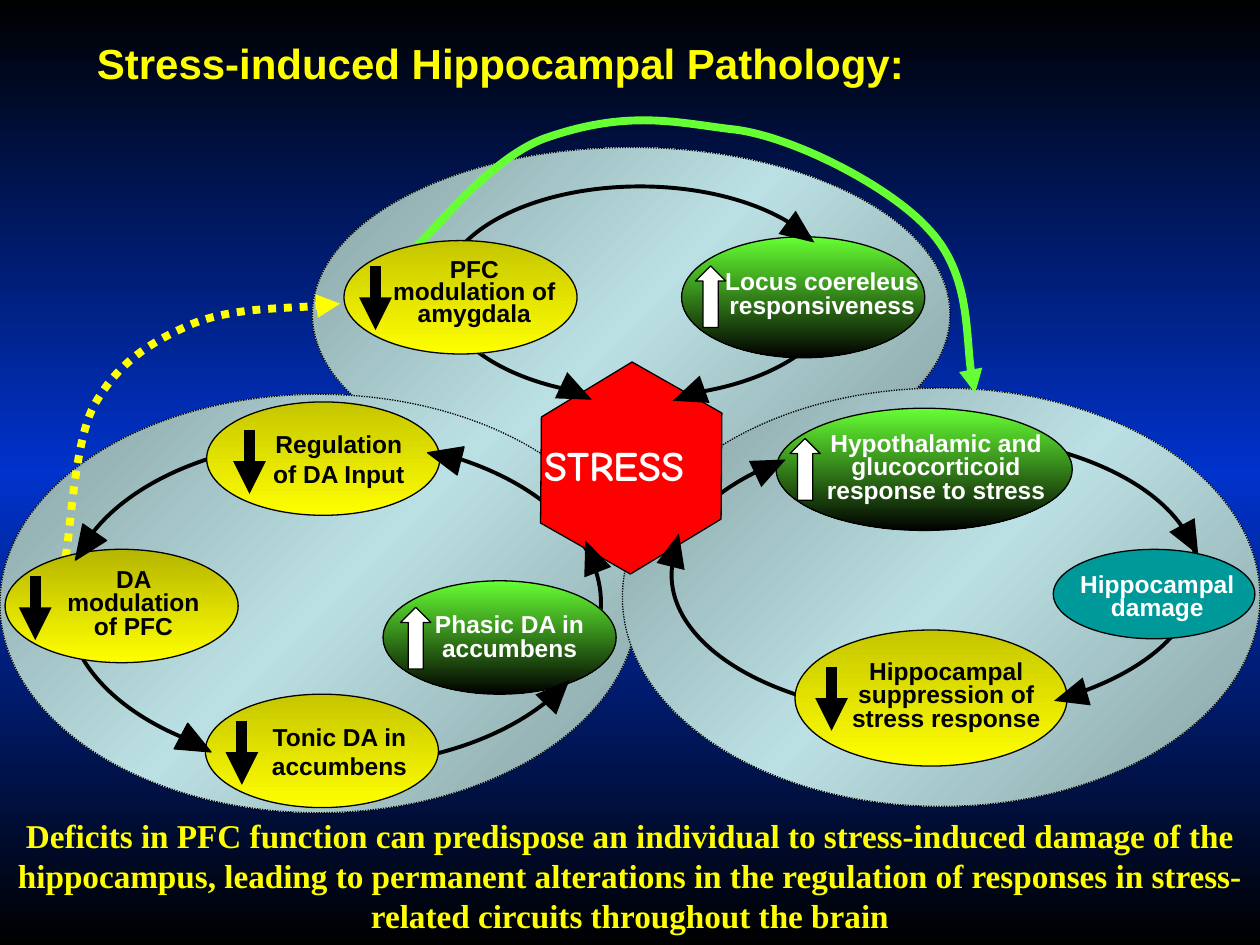
from copy import deepcopy
from dataclasses import dataclass

from pptx import Presentation, util as u
from pptx.dml.color import RGBColor
from pptx.enum import dml, shapes as kinds, text as texts
from pptx.oxml.xmlchemy import OxmlElement

BLACK = RGBColor(0x00, 0x00, 0x00)
WHITE = RGBColor(0xFF, 0xFF, 0xFF)
BLUE = RGBColor(0x00, 0x33, 0xCC)
YELLOW = RGBColor(0xFF, 0xFF, 0x00)
OLIVE = RGBColor(0xC6, 0xC6, 0x00)
DARK_OLIVE = RGBColor(0xB6, 0xB6, 0x00)
GREEN = RGBColor(0x66, 0xFF, 0x33)
TEAL = RGBColor(0x00, 0x99, 0x99)
RED = RGBColor(0xFF, 0x00, 0x00)
SLATE = RGBColor(0x86, 0xA0, 0xA2)
MIST = RGBColor(0xBB, 0xE0, 0xE3)

LOWERED = (OLIVE, YELLOW)
RAISED = (GREEN, BLACK)
Box = tuple[float, float, float, float]
Point = tuple[float, float]
Shape = kinds.MSO_SHAPE


@dataclass
class Node:
    label: str
    oval: Box
    label_box: Box
    colours: tuple
    down: Point | None = None  # top of a falling arrow
    up: Point | None = None  # top left of a rising arrow
    spacing: float = 0.8


@dataclass
class ArrowHead:
    left: float
    top: float
    rotation: float
    outlined: bool = False


LOBES = [(2.48, 1.17, 5.06, 2.65), (0, 3.13, 5.06, 3.32), (4.94, 3.08, 5.06, 3.32)]
RINGS = [(0.53, 3.49, 4.24, 2.59), (3.51, 1.48, 3.14, 1.67), (5.33, 3.45, 4.18, 2.23)]

NODES = [
    Node("Regulation of DA Input", (1.64, 3.19, 1.85, 0.9), (1.97, 3.36, 1.44, 0.57),
         LOWERED, down=(1.98, 3.41), spacing=1),
    Node("Tonic DA in accumbens", (1.63, 5.51, 1.85, 0.9), (1.93, 5.68, 1.53, 0.57),
         LOWERED, down=(1.92, 5.72), spacing=1),
    Node("Phasic DA in accumbens", (3.04, 4.61, 1.85, 0.9), (3.28, 4.83, 1.53, 0.47),
         RAISED, up=(3.18, 4.82)),
    Node("Locus coereleus responsiveness", (5.41, 1.88, 1.93, 0.96),
         (5.63, 2.11, 1.79, 0.47), RAISED, up=(5.52, 2.11)),
    Node("Hippocampal suppression of stress response", (6.31, 5, 2.16, 1.08),
         (6.6, 5.2, 1.82, 0.66), LOWERED, down=(6.6, 5.29)),
    Node("Hippocampal damage", (8.36, 4.36, 1.6, 0.71), (8.29, 4.51, 1.79, 0.47), (TEAL,)),
    Node("Hypothalamic and glucocorticoid response to stress", (6.16, 3.24, 2.35, 0.97),
         (6.4, 3.39, 2.06, 0.66), RAISED, up=(6.27, 3.48)),
    Node("DA modulation of PFC", (0.04, 4.36, 1.85, 0.9), (0.38, 4.47, 1.36, 0.66),
         (DARK_OLIVE, YELLOW), down=(0.28, 4.57)),
    Node("PFC modulation of amygdala", (2.73, 1.91, 1.85, 0.9), (3, 2.02, 1.53, 0.63),
         LOWERED, down=(2.98, 2.11), spacing=0.75),
]

ARROW_HEADS = [
    ArrowHead(3.41, 3.49, 283.9, True), ArrowHead(0.56, 4.2, 214.7, True),
    ArrowHead(1.44, 5.77, 117.9, True), ArrowHead(4.31, 5.36, 43.9),
    ArrowHead(4.58, 4.28, 338.7), ArrowHead(5.24, 4.23, 14.1),
    ArrowHead(6, 3.57, 64.8), ArrowHead(9.33, 4.15, 151.4),
    ArrowHead(8.38, 5.39, 253.9), ArrowHead(6.24, 1.71, 126.5),
    ArrowHead(4.46, 2.98, 115.2), ArrowHead(5.35, 3, 250.2),
]

DOPAMINE_TO_PFC = [
    (0.52, 4.42), (0.56, 4.22), (0.59, 3.53), (0.74, 3.23), (0.91, 2.92),
    (1.13, 2.75), (1.46, 2.6), (1.79, 2.44), (2.44, 2.45), (2.7, 2.41),
]
PFC_TO_HYPOTHALAMUS = [
    (3.31, 1.95), (3.47, 1.81), (3.89, 1.26), (4.32, 1.1), (5, 0.86), (5.39, 0.98),
    (5.84, 1.03), (6.3, 1.09), (7.07, 1.48), (7.38, 1.83), (7.7, 2.18), (7.66, 2.85),
    (7.74, 3.12),
]


def lengths(*inches: float) -> list[u.Cm]:
    return [u.Cm(value * 2.54) for value in inches]


def set_fill(owner, colours: tuple, angle: int = 90) -> None:
    """Fill with one colour, or with two or three evenly spaced, angle clockwise."""
    fill = owner.fill
    if len(colours) == 1:
        fill.solid()
        fill.fore_color.rgb = colours[0]
        return
    fill.gradient()
    fill.gradient_angle = 360 - angle
    if len(colours) == 3:
        element = owner.element.xpath(".//a:gsLst")[0]
        element.insert(1, deepcopy(element[0]))
    for index, (stop, colour) in enumerate(zip(fill.gradient_stops, colours)):
        stop.color.rgb = colour
        stop.position = index / (len(colours) - 1)


def set_line(shape, colour: RGBColor, width: float, dotted=False, arrow=False) -> None:
    shape.line.color.rgb = colour
    shape.line.width = u.Pt(width)
    if dotted:
        shape.line.dash_style = dml.MSO_LINE.ROUND_DOT
    if arrow:
        tail = OxmlElement("a:tailEnd")
        tail.set("type", "triangle")
        shape.line._get_or_add_ln().append(tail)


def add_shape(shapes, kind, box: Box, colours: tuple = (), *, angle=90,
              line_width=0.75, dotted=False, rotation=0):
    shape = shapes.add_shape(kind, *lengths(*box))
    shape.shadow.inherit = False
    shape.rotation = rotation
    if colours:
        set_fill(shape, colours, angle)
    else:
        shape.fill.background()
    if line_width:
        set_line(shape, BLACK, line_width, dotted)
    else:
        shape.line.fill.background()
    return shape


def add_text(shapes, content: str, box: Box, *, size=14, font="Arial", colour=BLACK,
             align=texts.PP_ALIGN.CENTER, spacing=1.0, wrap=True) -> None:
    frame = shapes.add_textbox(*lengths(*box)).text_frame
    frame.word_wrap = wrap
    frame.auto_size = texts.MSO_AUTO_SIZE.SHAPE_TO_FIT_TEXT
    paragraph = frame.paragraphs[0]
    paragraph.alignment = align
    paragraph.line_spacing = spacing
    run = paragraph.add_run()
    run.text = content
    run.font.size = u.Pt(size)
    run.font.name = font
    run.font.bold = True
    run.font.color.rgb = colour


def add_curve(shapes, points: list[Point], colour: RGBColor, dotted=False) -> None:
    """Draw a Bézier arrow: a start, then two controls and an end per segment."""
    start, *rest = [lengths(*point) for point in points]
    builder = shapes.build_freeform(*start)
    builder.add_line_segments(rest, close=False)
    curve = builder.convert_to_shape()
    curve.shadow.inherit = False
    curve.fill.background()
    set_line(curve, colour, 4.5, dotted, arrow=True)
    segments = curve.element.xpath(".//a:lnTo")
    for first in range(0, len(segments), 3):
        bezier = OxmlElement("a:cubicBezTo")
        segments[first].addprevious(bezier)
        for segment in segments[first:first + 3]:
            bezier.append(segment[0])
            segment.getparent().remove(segment)


def add_node(slide, node: Node) -> None:
    shapes = slide.shapes.add_group_shape().shapes
    add_shape(shapes, Shape.OVAL, node.oval, node.colours)
    if node.down:
        x, y = node.down
        arrow = shapes.add_connector(kinds.MSO_CONNECTOR.STRAIGHT, *lengths(x, y, x, y + 0.51))
        set_line(arrow, BLACK, 6.25, arrow=True)
        arrow.element.spPr.append(OxmlElement("a:effectLst"))
    add_text(shapes, node.label, node.label_box, spacing=node.spacing,
             colour=BLACK if node.down else WHITE)
    if node.up:
        add_shape(shapes, Shape.UP_ARROW, (*node.up, 0.24, 0.49), (WHITE,))


def main() -> None:
    presentation = Presentation()
    presentation.slide_width, presentation.slide_height = lengths(10, 7.5)
    slide = presentation.slides.add_slide(presentation.slide_layouts[6])
    shapes = slide.shapes
    background = slide.background
    background.fill.gradient()
    stops = slide.element.xpath(".//a:gsLst")[0]
    stops.insert(1, deepcopy(stops[0]))
    background.fill.gradient_angle = 270
    for stop, colour, position in zip(background.fill.gradient_stops,
                                      (BLACK, BLUE, BLACK), (0, 0.5, 1)):
        stop.color.rgb = colour
        stop.position = position

    for lobe in LOBES:
        add_shape(shapes, Shape.OVAL, lobe, (SLATE, MIST, SLATE), angle=45, dotted=True)
    for ring in RINGS:
        add_shape(shapes, Shape.OVAL, ring, line_width=2.25)
    add_curve(shapes, DOPAMINE_TO_PFC, YELLOW, dotted=True)
    add_curve(shapes, PFC_TO_HYPOTHALAMUS, GREEN)
    for node in NODES:
        add_node(slide, node)

    centre = slide.shapes.add_group_shape().shapes
    hexagon = add_shape(centre, Shape.HEXAGON, (4.19, 2.98, 1.64, 1.47), (RED,), rotation=29.6)
    hexagon.adjustments[0] = 0.279
    add_text(centre, "STRESS", (4.22, 3.44, 1.55, 0.5), size=24, font="Comic Neue",
             colour=WHITE, align=texts.PP_ALIGN.LEFT, wrap=False)
    for head in ARROW_HEADS:
        add_shape(shapes, Shape.ISOSCELES_TRIANGLE, (head.left, head.top, 0.23, 0.27), (BLACK,),
                  rotation=head.rotation, line_width=0.75 if head.outlined else 0)

    add_text(shapes, "Deficits in PFC function can predispose an individual to stress-induced "
             "damage of the hippocampus, leading to permanent alterations in the regulation of "
             "responses in stress-related circuits throughout the brain",
             (0, 6.42, 10, 1.05), size=19, font="Times New Roman", colour=YELLOW)
    add_text(shapes, "Stress-induced Hippocampal Pathology:", (0.67, 0.25, 6.61, 0.5),
             size=24, colour=YELLOW, align=texts.PP_ALIGN.LEFT, wrap=False)
    presentation.save("out.pptx")


if __name__ == "__main__":
    main()
